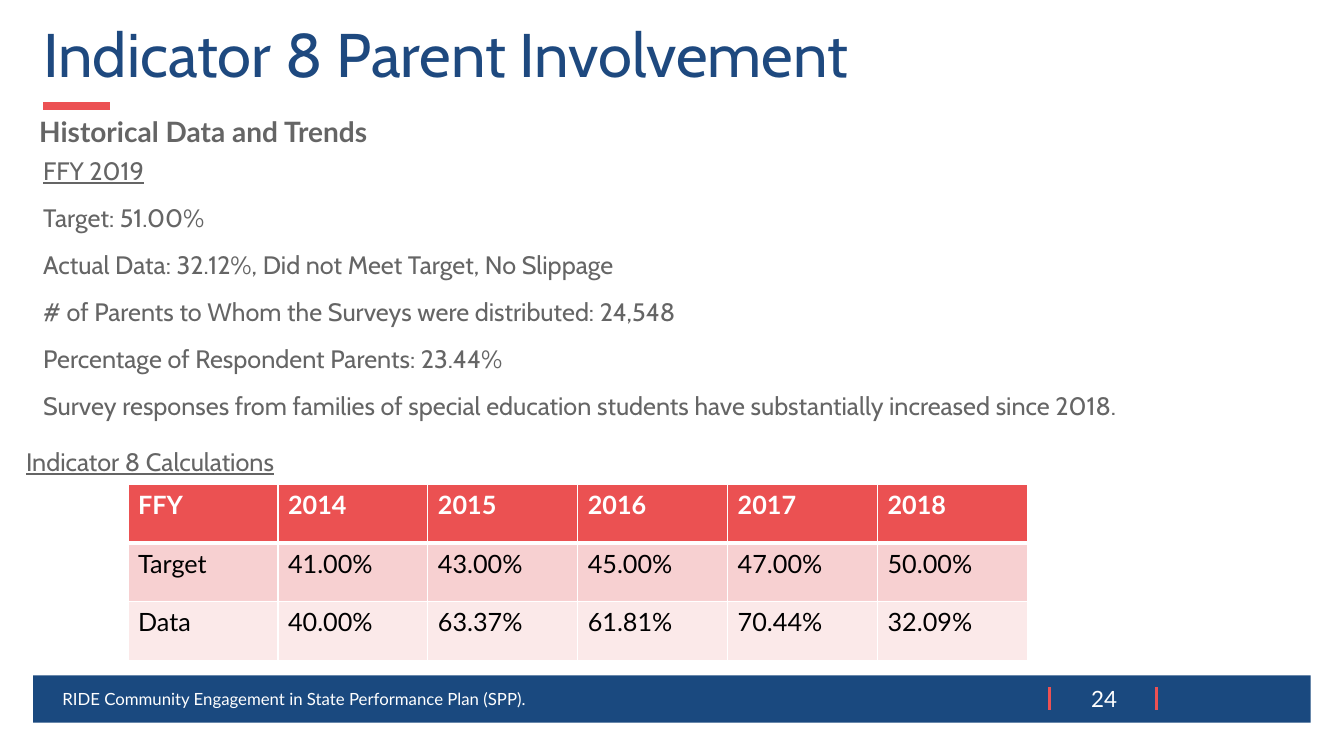
from lxml import etree
from pptx import Presentation
from pptx.dml.color import RGBColor
from pptx.enum import shapes, text
from pptx.oxml.ns import qn
from pptx.util import Inches, Pt

NAVY = RGBColor(0x1A, 0x49, 0x7F)
TITLE_BLUE = RGBColor(0x1E, 0x49, 0x7F)
CORAL = RGBColor(0xEC, 0x51, 0x53)
HEADER_RED = RGBColor(0xEB, 0x51, 0x52)
ROW_PINK = RGBColor(0xF7, 0xD0, 0xD1)
ROW_PALE = RGBColor(0xFB, 0xE9, 0xE9)
GREY = RGBColor(0x65, 0x65, 0x65)
WHITE = RGBColor(0xFF, 0xFF, 0xFF)
BLACK = RGBColor(0, 0, 0)

prs = Presentation()
prs.slide_width, prs.slide_height = Inches(13.33), Inches(7.5)
slide = prs.slides.add_slide(prs.slide_layouts[5])


def format_text(paragraph, name, size, color, **extra):
    paragraph.font.color.rgb = color
    for key, value in dict(name=name, size=Pt(size), **extra).items():
        setattr(paragraph.font, key, value)


def add_text(box, lines, name, size, color, spacing=1.0, **extra):
    frame = slide.shapes.add_textbox(*map(Inches, box)).text_frame
    frame.word_wrap = True
    frame.text = "\n".join(lines)
    for index, paragraph in enumerate(frame.paragraphs):
        paragraph.line_spacing = spacing
        paragraph.space_before = Pt(6 if index else 0)
        paragraph.space_after = Pt(6)
        format_text(paragraph, name, size, color, **extra)
    return frame


# Title
title = slide.shapes.title
title.left, title.top, title.width, title.height = map(Inches, (0.33, 0.19, 12.67, 0.77))
title.text_frame.text = "Indicator 8 Parent Involvement"
title.text_frame.vertical_anchor = text.MSO_ANCHOR.MIDDLE
heading = title.text_frame.paragraphs[0]
heading.alignment = text.PP_ALIGN.LEFT
heading.line_spacing = 0.9
format_text(heading, "Cabin", 44, TITLE_BLUE)

# Footer bar
footer_bar = slide.shapes.add_shape(
    shapes.MSO_SHAPE.RECTANGLE, *map(Inches, (0.33, 6.7, 12.67, 0.47)))
footer_bar.shadow.inherit = False
footer_bar.fill.solid()
footer_bar.fill.fore_color.rgb = NAVY
footer_bar.line.fill.background()

# Title accent and the two marks beside the page number
for x1, y1, x2, y2, width in ((0.43, 1.05, 1.09, 1.05, 6),
                              (10.41, 6.82, 10.41, 7.04, 2.25),
                              (11.47, 6.82, 11.47, 7.04, 2.25)):
    accent = slide.shapes.add_connector(
        shapes.MSO_CONNECTOR.STRAIGHT, *map(Inches, (x1, y1, x2, y2)))
    accent.line.color.rgb = CORAL
    accent.line.width = Pt(width)
    etree.SubElement(accent.element.spPr, qn("a:effectLst"))

# Footer text and page number
footer = add_text((0.52, 6.73, 8.47, 0.4),
                  ["RIDE Community Engagement in State Performance Plan (SPP)."],
                  "Lato", 12, WHITE)
page_number = add_text((10.63, 6.75, 0.64, 0.37), ["24"], "Lato", 16, WHITE)
page_number.paragraphs[0].alignment = text.PP_ALIGN.CENTER
for frame in (footer, page_number):
    frame.vertical_anchor = text.MSO_ANCHOR.MIDDLE
    frame.paragraphs[0].space_after = Pt(0)

# Historical data
add_text((0.29, 1.01, 5.68, 0.48), ["Historical Data and Trends"],
         "Lato", 20, GREY, 1.23, bold=True)
history = add_text((0.33, 1.49, 11.6, 2.76), [
    "FFY 2019",
    "Target: 51.00%",
    "Actual Data: 32.12%, Did not Meet Target, No Slippage",
    "# of Parents to Whom the Surveys were distributed: 24,548",
    "Percentage of Respondent Parents: 23.44%",
    "Survey responses from families of special education students "
    "have substantially increased since 2018.",
], "Cabin", 18, GREY)
history.paragraphs[0].font.underline = True
add_text((0.16, 4.31, 3, 0.44), ["Indicator 8 Calculations"],
         "Cabin", 18, GREY, 1.23, underline=True)

# Calculations table
calculations = [
    ["FFY", "2014", "2015", "2016", "2017", "2018"],
    ["Target", "41.00%", "43.00%", "45.00%", "47.00%", "50.00%"],
    ["Data", "40.00%", "63.37%", "61.81%", "70.44%", "32.09%"],
]
table = slide.shapes.add_table(
    3, 6, *map(Inches, (1.27, 4.81, 8.92, 1.74))).table
for r, (values, row_fill) in enumerate(
        zip(calculations, (HEADER_RED, ROW_PINK, ROW_PALE))):
    for c, value in enumerate(values):
        cell = table.cell(r, c)
        cell.text = value
        format_text(cell.text_frame.paragraphs[0], "Lato", 18,
                    BLACK if r else WHITE, bold=r == 0)
        # White borders, thicker between the header and the data
        thick_side = ("lnB", "lnT", None)[r]
        for side in ("lnL", "lnR", "lnT", "lnB"):
            border = etree.SubElement(
                cell._tc.get_or_add_tcPr(), qn(f"a:{side}"),
                w=str(Pt(3 if side == thick_side else 1)))
            border_fill = etree.SubElement(border, qn("a:solidFill"))
            etree.SubElement(border_fill, qn("a:srgbClr"), val=str(WHITE))
        cell.fill.solid()
        cell.fill.fore_color.rgb = row_fill

prs.save("out.pptx")
